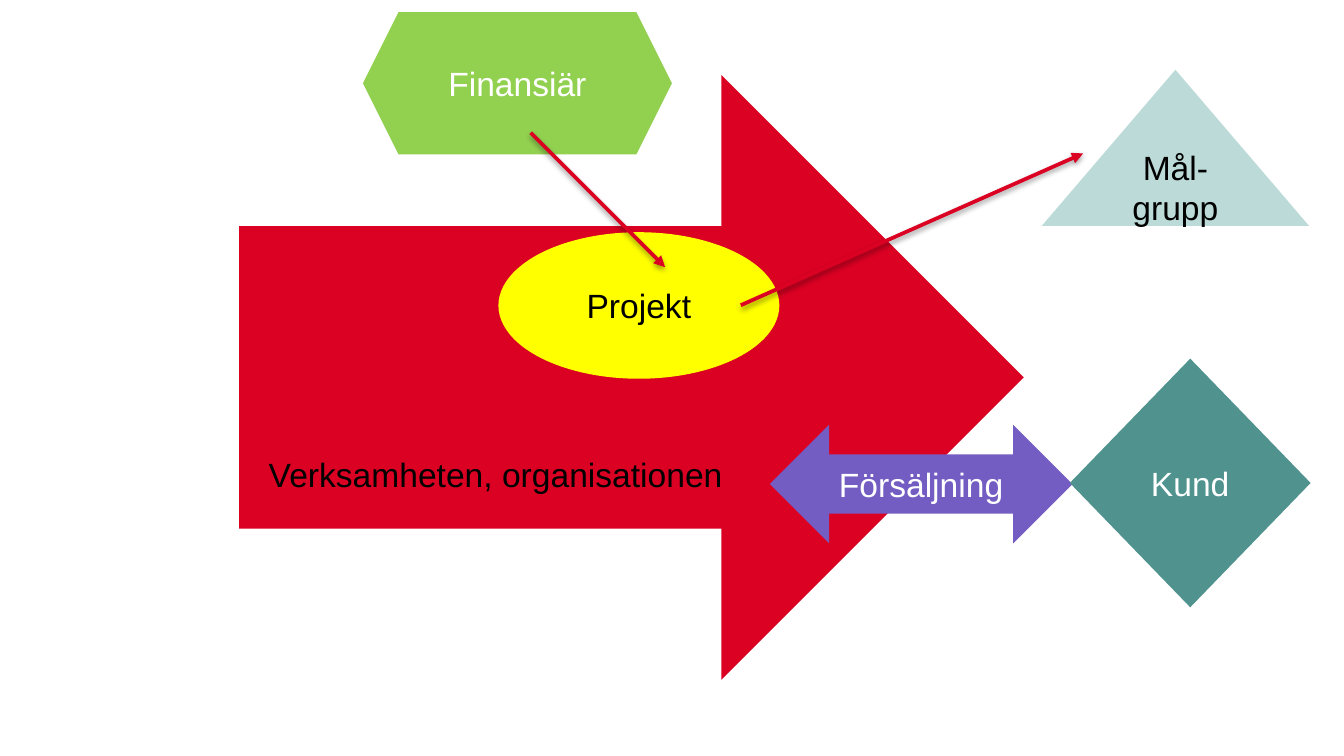
import dataclasses

import lxml.etree
import pptx
import pptx.dml.color
import pptx.enum.shapes
import pptx.enum.text
import pptx.oxml
import pptx.oxml.ns
import pptx.util

Cm = pptx.util.Cm
Pt = pptx.util.Pt
Kind = pptx.enum.shapes.MSO_SHAPE
Color = pptx.dml.color.RGBColor.from_string


@dataclasses.dataclass(frozen=True)
class Theme:
    red: str = "DA0123"
    yellow: str = "FFFF00"
    purple: str = "745DC2"
    teal: str = "4F928E"
    green: str = "92D050"
    pale: str = "BBDAD8"
    black: str = "000000"
    white: str = "FFFFFF"
    font: str = "Arial"
    size: int = 18
    line: int = 2


theme = Theme()


def write(box, text, color, align, box_format):
    frame = box.text_frame
    for name, value in box_format.items():
        setattr(frame, name, value)
    para = frame.paragraphs[0]
    para.alignment = align
    span = para.add_run()
    span.text = text
    for name, value in {"name": theme.font, "size": Pt(theme.size)}.items():
        setattr(span.font, name, value)
    span.font.color.rgb = Color(color)


deck = pptx.Presentation()
deck.slide_width, deck.slide_height = Cm(25.4), Cm(14.29)
page = deck.slides.add_slide(deck.slide_layouts[6])

# Shapes: kind, place (left, top, width, height), fill, text, text colour
shapes = [
    (Kind.RIGHT_ARROW, (4.52, 1.42, 14.83, 11.43), theme.red, "", theme.black),
    (Kind.OVAL, (9.42, 4.39, 5.31, 2.77), theme.yellow, "Projekt", theme.black),
    (Kind.LEFT_RIGHT_ARROW, (14.55, 8.03, 5.72, 2.24), theme.purple, "Försäljning", theme.white),
    (Kind.DIAMOND, (20.22, 6.78, 4.55, 4.7), theme.teal, "Kund", theme.white),
    (Kind.HEXAGON, (6.86, 0.23, 5.84, 2.69), theme.green, "Finansiär", theme.white),
    (Kind.ISOSCELES_TRIANGLE, (19.69, 1.32, 5.05, 2.95), theme.pale, "Mål-grupp", theme.black),
]
centred = {"word_wrap": True, "vertical_anchor": pptx.enum.text.MSO_ANCHOR.MIDDLE}
for kind, place, fill, text, color in shapes:
    shape = page.shapes.add_shape(kind, *map(Cm, place))
    shape.shadow.inherit = False
    shape.fill.solid()
    shape.fill.fore_color.rgb = Color(fill)
    shape.line.fill.background()
    if text:
        write(shape, text, color, pptx.enum.text.PP_ALIGN.CENTER, centred)

# Label on the large arrow
label = page.shapes.add_textbox(Cm(4.83), Cm(8.46), Cm(9.17), Cm(1.02))
write(label, "Verksamheten, organisationen", theme.black, pptx.enum.text.PP_ALIGN.LEFT,
      {"word_wrap": False, "auto_size": pptx.enum.text.MSO_AUTO_SIZE.SHAPE_TO_FIT_TEXT})

# Arrows from financier to project, and from project to target group
shadow = f"""<a:effectLst {pptx.oxml.ns.nsdecls("a")}>
  <a:outerShdw blurRad="{Pt(3.1)}" dist="{Pt(1.6)}" dir="5400000" rotWithShape="0">
    <a:srgbClr val="{theme.black}"><a:alpha val="38000"/></a:srgbClr>
  </a:outerShdw>
</a:effectLst>"""
for ends in [(10.03, 2.51, 12.57, 5.05), (14, 5.77, 20.47, 2.9)]:
    arrow = page.shapes.add_connector(pptx.enum.shapes.MSO_CONNECTOR.STRAIGHT, *map(Cm, ends))
    arrow.line.color.rgb = Color(theme.red)
    arrow.line.width = Pt(theme.line)
    lxml.etree.SubElement(arrow.line._get_or_add_ln(), pptx.oxml.ns.qn("a:tailEnd"), type="triangle")
    arrow._element.spPr.append(pptx.oxml.parse_xml(shadow))

deck.save("out.pptx")
